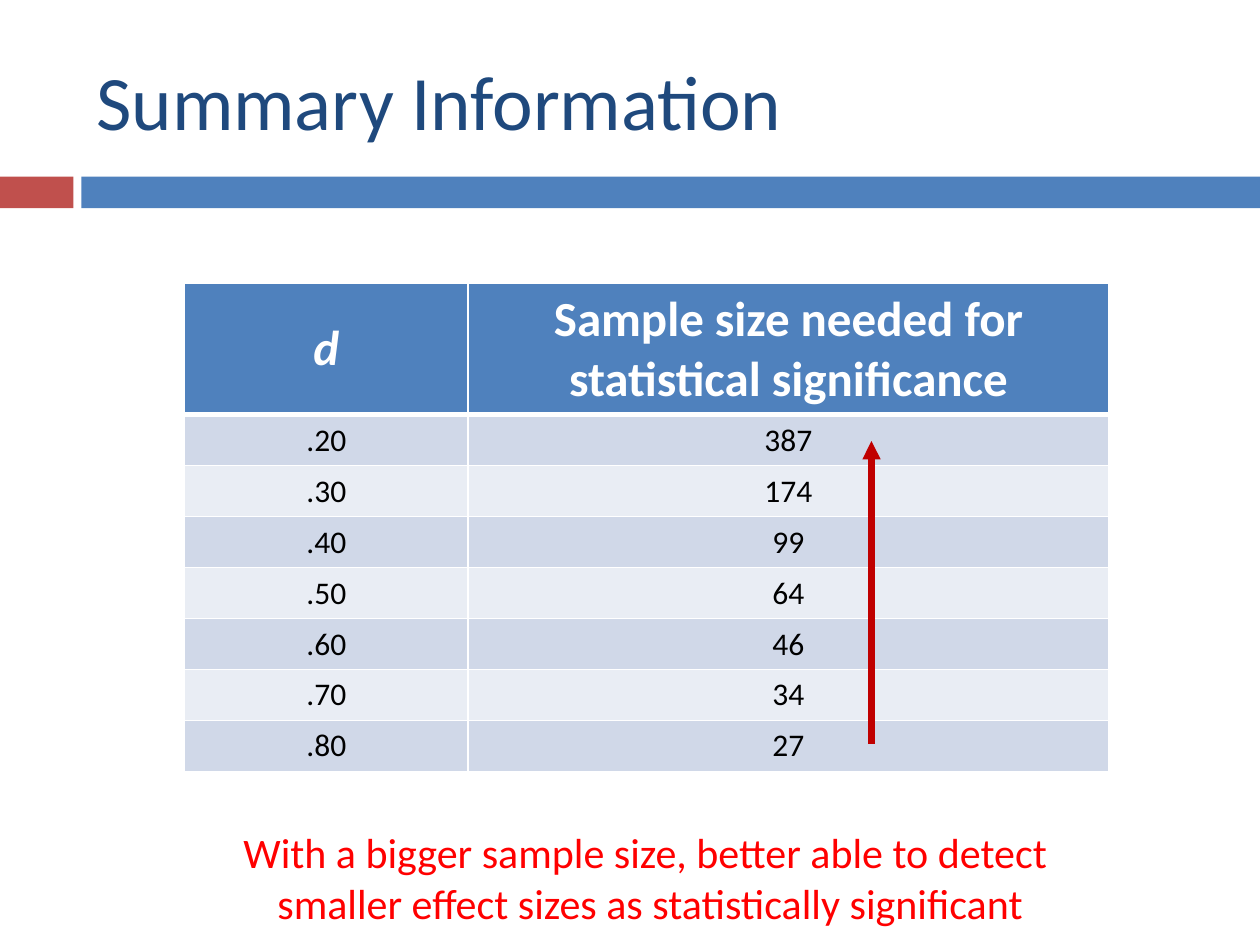
from lxml import etree
from pptx import Presentation
from pptx.dml.color import RGBColor
from pptx.enum import shapes, text
from pptx.oxml.ns import qn
from pptx.util import Pt

FONT = "Calibri"
NAVY = RGBColor(0x1F, 0x49, 0x7D)
BLUE = RGBColor(0x4F, 0x81, 0xBD)
BRICK = RGBColor(0xC0, 0x50, 0x4D)
RED = RGBColor(0xFF, 0, 0)
DARK_RED = RGBColor(0xC0, 0, 0)
WHITE = RGBColor(0xFF, 0xFF, 0xFF)
BLACK = RGBColor(0, 0, 0)
BANDS = (RGBColor(0xD0, 0xD8, 0xE8), RGBColor(0xE9, 0xED, 0xF4))

ROWS = [
    ("d", "Sample size needed for statistical significance"),
    (".20", "387"),
    (".30", "174"),
    (".40", "99"),
    (".50", "64"),
    (".60", "46"),
    (".70", "34"),
    (".80", "27"),
]


def style(p, size, color, align, bold=False):
    p.alignment = align
    f = p.font
    f.name, f.size, f.bold = FONT, Pt(size), bold
    f.color.rgb = color


def add_bar(s, left, width, color):
    sp = s.shapes.add_shape(shapes.MSO_SHAPE.RECTANGLE, Pt(left), Pt(101), Pt(width), Pt(18))
    sp.shadow.inherit = False
    sp.fill.solid()
    sp.fill.fore_color.rgb = color
    sp.line.fill.background()


def add_text(s, box, content, size, color, align, wrap=True):
    tf = s.shapes.add_textbox(*map(Pt, box)).text_frame
    tf.word_wrap = wrap
    tf.vertical_anchor = text.MSO_ANCHOR.MIDDLE
    tf.text = content
    style(tf.paragraphs[0], size, color, align)


def add_borders(cell, bottom):
    tc_pr = cell._tc.get_or_add_tcPr()
    for side, width in (("L", 1), ("R", 1), ("T", 1), ("B", bottom)):
        ln = etree.SubElement(tc_pr, qn(f"a:ln{side}"), w=str(Pt(width)))
        fill = etree.SubElement(ln, qn("a:solidFill"))
        etree.SubElement(fill, qn("a:srgbClr"), val=str(WHITE))


def add_sample_table(s):
    frame = s.shapes.add_table(len(ROWS), 2, Pt(105.5), Pt(162), Pt(528), Pt(279))
    table = frame.table
    for column, width in zip(table.columns, (162, 366)):
        column.width = Pt(width)
    for i, row in enumerate(ROWS):
        header = i == 0
        table.rows[i].height = Pt(75 if header else 29.15)
        for j, value in enumerate(row):
            cell = table.cell(i, j)
            add_borders(cell, 3 if header else 1)
            cell.fill.solid()
            cell.fill.fore_color.rgb = BLUE if header else BANDS[(i - 1) % 2]
            if header or j == 0:
                cell.vertical_anchor = text.MSO_ANCHOR.MIDDLE
            cell.text = value
            style(cell.text_frame.paragraphs[0], 28 if header else 18,
                  WHITE if header else BLACK, text.PP_ALIGN.CENTER, header)
    table.cell(0, 0).text_frame.paragraphs[0].font.italic = True


def add_arrow(s, x, start, end):
    sp = s.shapes.add_connector(shapes.MSO_CONNECTOR.STRAIGHT, Pt(x), Pt(start), Pt(x), Pt(end))
    sp.line.color.rgb = DARK_RED
    sp.line.width = Pt(3.5)
    etree.SubElement(sp.line._get_or_add_ln(), qn("a:tailEnd"), type="triangle")
    etree.SubElement(sp._element.spPr, qn("a:effectLst"))


def main():
    prs = Presentation()
    prs.slide_width, prs.slide_height = Pt(720), Pt(540)
    s = prs.slides.add_slide(prs.slide_layouts[6])
    add_bar(s, 0, 42, BRICK)
    add_bar(s, 46.5, 673.5, BLUE)
    add_text(s, (48, 18, 642, 78), "Summary Information", 44, NAVY, text.PP_ALIGN.LEFT)
    add_sample_table(s)
    add_text(s, (126.5, 468.5, 490, 65.5),
             "With a bigger sample size, better able to detect \v"
             "smaller effect sizes as statistically significant",
             24, RED, text.PP_ALIGN.CENTER, wrap=False)
    add_arrow(s, 498, 425, 252)
    prs.save("out.pptx")


if __name__ == "__main__":
    main()
